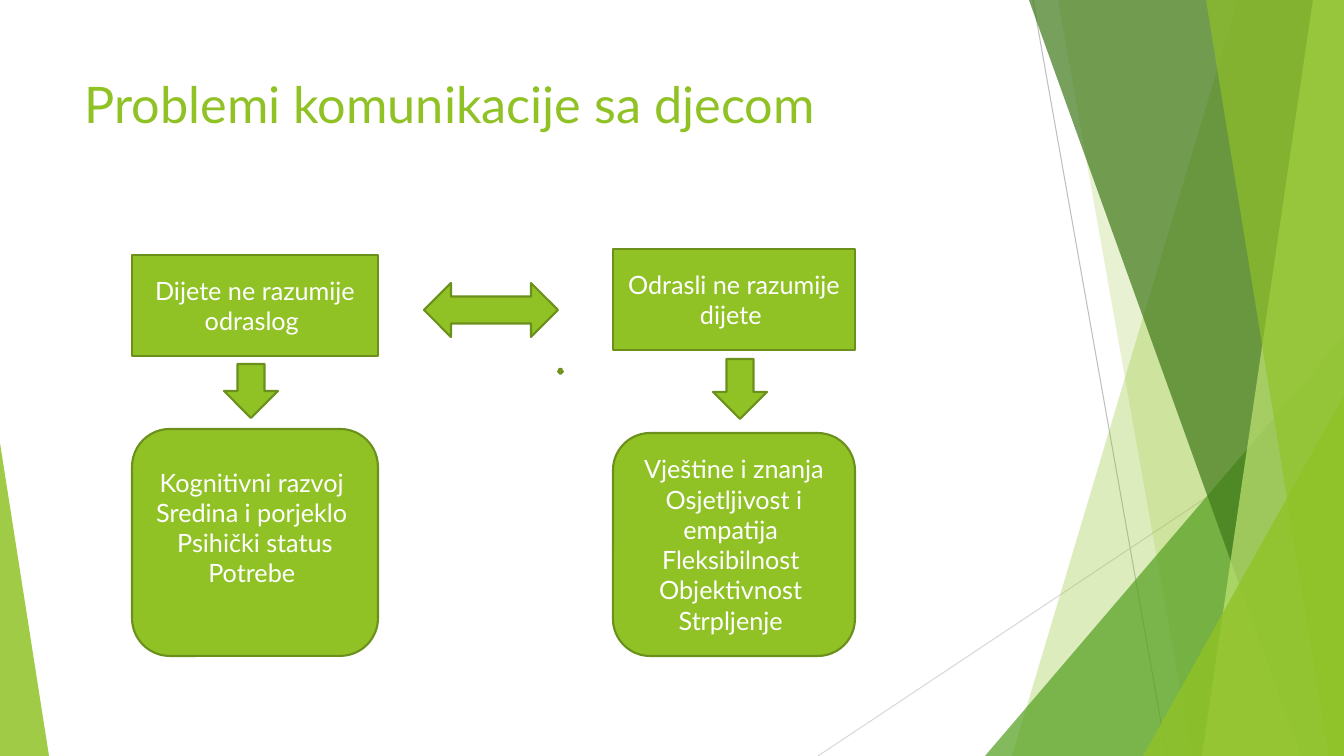
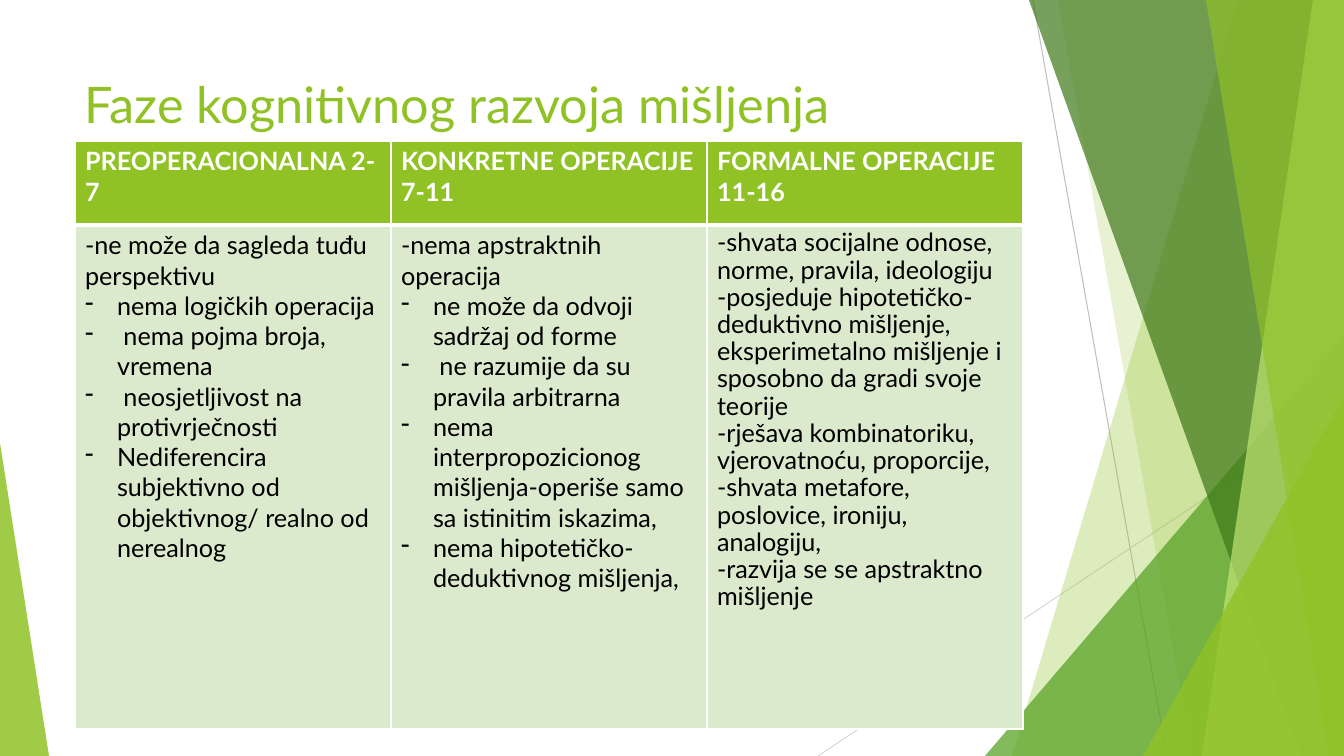
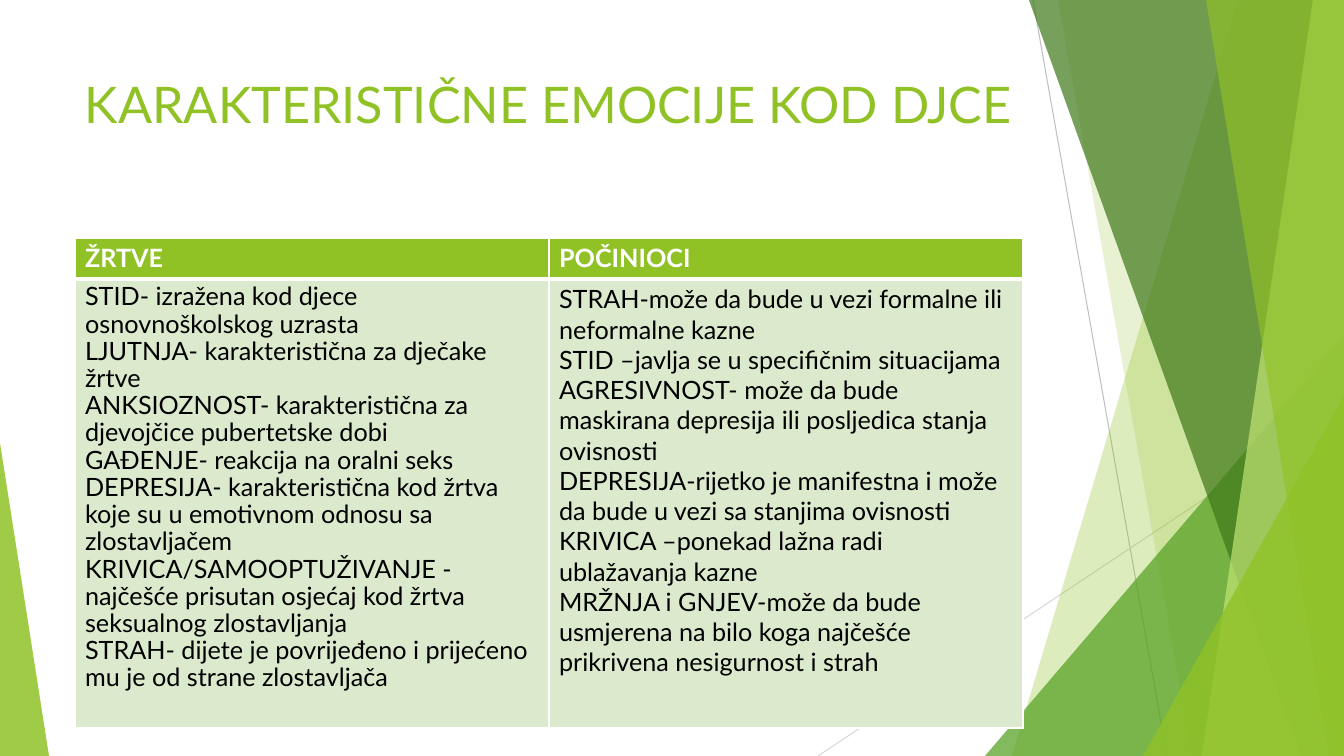
"""Build three slides on communication with children and their emotions."""
from dataclasses import dataclass

from lxml import etree
from pptx import Presentation
from pptx import util as u
from pptx.dml import color
from pptx.enum import shapes, text
from pptx.oxml import ns

PX = 12192000 / 1344
WIDTH, HEIGHT = 1344, 756
KIND = shapes.MSO_SHAPE


@dataclass(frozen=True)
class Theme:
    """Colours, font and type sizes of the deck."""
    font: str = "Lato"
    title_size: int = 36
    body_size: int = 18
    lime: str = "90C226"
    green: str = "54A021"
    forest: str = "3F7819"
    pale: str = "C0E474"
    outline: str = "6B901C"
    cell: str = "DBE9CD"
    white: str = "FFFFFF"
    black: str = "000000"


THEME = Theme()


@dataclass(frozen=True)
class Ray:
    """Thin line behind the facets."""
    start: tuple[int, int]
    end: tuple[int, int]
    colour: str


@dataclass(frozen=True)
class Band:
    """Full-height facet given by its top and bottom left corners."""
    top: int
    bottom: int
    colour: str
    opacity: int


@dataclass(frozen=True)
class Wedge:
    """Right-angled triangle standing on the slide's lower edge."""
    left: int
    top: int
    width: int
    apex: int
    colour: str
    opacity: int


@dataclass(frozen=True)
class Node:
    """Box or block arrow of the diagram."""
    kind: KIND
    left: int
    top: int
    width: int
    height: int
    lines: tuple[str, ...] = ()
    space_below: int = 5


@dataclass(frozen=True)
class Column:
    """Heading and paragraphs of one table column."""
    heading: str
    lines: tuple[str, ...]
    spacing: float = 1.0
    dashed: bool = False


RAYS = (
    Ray((1033, 0), (1167, HEIGHT), "BFBFBF"),
    Ray((WIDTH, 406), (818, HEIGHT), "D9D9D9"),
)
FACETS = (
    Band(1238, 1012, THEME.lime, 30),
    Band(1058, 1192, THEME.lime, 20),
    Wedge(985, 336, 359, 1, THEME.green, 72),
    Band(1029, 1301, THEME.forest, 70),
    Band(1313, 1202, THEME.pale, 70),
    Band(1206, 1329, THEME.lime, 65),
    Wedge(1143, 396, 201, 1, THEME.lime, 80),
    Wedge(0, 443, 49, 0, THEME.lime, 85),
)
PROBLEMS = (
    Node(KIND.RECTANGLE, 132, 255, 246, 101, ("Dijete ne razumije odraslog ",)),
    Node(KIND.DOWN_ARROW, 558, 369, 5, 5),
    Node(KIND.LEFT_RIGHT_ARROW, 424, 283, 134, 54),
    Node(KIND.RECTANGLE, 613, 249, 242, 101, ("Odrasli ne razumije dijete ",)),
    Node(KIND.DOWN_ARROW, 224, 364, 54, 54),
    Node(KIND.DOWN_ARROW, 713, 359, 54, 60),
    Node(KIND.ROUNDED_RECTANGLE, 132, 429, 246, 227,
         ("Kognitivni razvoj ", "Sredina i porjeklo ", "Psihički status Potrebe "), 35),
    Node(KIND.ROUNDED_RECTANGLE, 613, 433, 242, 223,
         ("Vještine i znanja", "Osjetljivost i empatija ", "Fleksibilnost ",
          "Objektivnost ", "Strpljenje ")),
)
PHASES = (
    Column("PREOPERACIONALNA 2-7", (
        "-ne može da sagleda tuđu perspektivu",
        "nema logičkih operacija",
        " nema pojma broja, vremena",
        " neosjetljivost na protivrječnosti",
        "Nediferencira subjektivno od objektivnog/ realno od nerealnog",
    ), dashed=True),
    Column("KONKRETNE OPERACIJE 7-11", (
        "-nema apstraktnih operacija",
        "ne može da odvoji sadržaj od forme",
        " ne razumije da su pravila arbitrarna",
        "nema interpropozicionog mišljenja-operiše samo sa istinitim iskazima,",
        "nema hipotetičko-deduktivnog mišljenja,",
    ), dashed=True),
    Column("FORMALNE OPERACIJE 11-16", (
        "-shvata socijalne odnose, norme, pravila, ideologiju",
        "-posjeduje hipotetičko-deduktivno mišljenje, eksperimetalno mišljenje "
        "i sposobno da gradi svoje teorije",
        "-rješava kombinatoriku, vjerovatnoću, proporcije,",
        "-shvata metafore, poslovice, ironiju, analogiju,",
        "-razvija se se apstraktno mišljenje",
    ), spacing=0.9),
)
EMOTIONS = (
    Column("ŽRTVE", (
        "STID- izražena kod djece osnovnoškolskog uzrasta",
        "LJUTNJA- karakteristična za dječake žrtve",
        "ANKSIOZNOST- karakteristična za djevojčice pubertetske dobi",
        "GAĐENJE- reakcija na oralni seks",
        "DEPRESIJA- karakteristična kod žrtva koje su u emotivnom odnosu sa zlostavljačem",
        "KRIVICA/SAMOOPTUŽIVANJE - najčešće prisutan osjećaj kod žrtva "
        "seksualnog zlostavljanja",
        "STRAH- dijete je povrijeđeno i prijećeno mu je od strane zlostavljača",
    ), spacing=0.9),
    Column("POČINIOCI", (
        "STRAH-može da bude u vezi formalne ili neformalne kazne",
        "STID –javlja se u specifičnim situacijama",
        "AGRESIVNOST- može da bude maskirana depresija ili posljedica stanja ovisnosti",
        "DEPRESIJA-rijetko je manifestna i može da bude u vezi sa stanjima ovisnosti",
        "KRIVICA –ponekad lažna radi ublažavanja kazne",
        "MRŽNJA i GNJEV-može da bude usmjerena na bilo koga najčešće prikrivena "
        "nesigurnost i strah",
    )),
)


def px(*lengths: int) -> list[u.Emu]:
    """Turn pixel lengths into EMU."""
    return [u.Emu(round(length * PX)) for length in lengths]


def rgb(code: str) -> color.RGBColor:
    """Return the colour for a hexadecimal code."""
    return color.RGBColor.from_string(code)


def paint(facet, code: str, opacity: int = 100) -> None:
    """Give a shape a flat fill without shadow."""
    facet.shadow.inherit = False
    facet.fill.solid()
    facet.fill.fore_color.rgb = rgb(code)
    if opacity < 100:
        tint = facet.element.xpath("./p:spPr/a:solidFill/a:srgbClr")[0]
        etree.SubElement(tint, ns.qn("a:alpha"), val=str(opacity * 1000))


def write(paragraph, words: str, code: str, size: int = THEME.body_size,
          bold: bool = False) -> None:
    """Add one styled run to a paragraph."""
    run = paragraph.add_run()
    run.text = words
    run.font.name = THEME.font
    run.font.size = u.Pt(size)
    run.font.bold = bold
    run.font.color.rgb = rgb(code)


def paragraphs(frame, lines: tuple[str, ...]):
    """Yield a paragraph for each line of text."""
    for index, line in enumerate(lines):
        yield (frame.add_paragraph() if index else frame.paragraphs[0]), line


def draw_ray(slide, ray: Ray) -> None:
    """Draw one thin background line."""
    line = slide.shapes.add_connector(
        shapes.MSO_CONNECTOR.STRAIGHT, *px(*ray.start, *ray.end))
    line.line.color.rgb = rgb(ray.colour)
    line.line.width = u.Pt(0.75)
    etree.SubElement(line.element.spPr, ns.qn("a:effectLst"))


def draw_facet(slide, facet: Band | Wedge) -> None:
    """Draw one translucent background facet."""
    if isinstance(facet, Band):
        outline = slide.shapes.build_freeform(facet.top, 0, scale=PX)
        outline.add_line_segments(
            [(WIDTH, 0), (WIDTH, HEIGHT), (facet.bottom, HEIGHT)], close=True)
        pane = outline.convert_to_shape()
    else:
        pane = slide.shapes.add_shape(
            KIND.ISOSCELES_TRIANGLE,
            *px(facet.left, facet.top, facet.width, HEIGHT - facet.top))
        pane.adjustments[0] = facet.apex
    paint(pane, facet.colour, facet.opacity)
    pane.line.fill.background()


def add_titled_slide(deck, title: str):
    """Add a slide with the shared background and title."""
    slide = deck.slides.add_slide(deck.slide_layouts[6])
    for ray in RAYS:
        draw_ray(slide, ray)
    for facet in FACETS:
        draw_facet(slide, facet)
    frame = slide.shapes.add_textbox(*px(75, 68, 948, 145)).text_frame
    frame.word_wrap = True
    write(frame.paragraphs[0], title, THEME.lime, THEME.title_size)
    return slide


def draw_node(slide, node: Node) -> None:
    """Draw one box or arrow of the diagram."""
    box = slide.shapes.add_shape(
        node.kind, *px(node.left, node.top, node.width, node.height))
    paint(box, THEME.lime)
    box.line.color.rgb = rgb(THEME.outline)
    box.line.width = u.Pt(1.5)
    frame = box.text_frame
    frame.word_wrap = True
    frame.vertical_anchor = text.MSO_ANCHOR.MIDDLE
    frame.margin_bottom = px(node.space_below)[0]
    for paragraph, line in paragraphs(frame, node.lines):
        paragraph.alignment = text.PP_ALIGN.CENTER
        write(paragraph, line, THEME.white)


def style_cell(cell, fill: str, borders: dict[str, int]) -> None:
    """Fill a cell and give it white borders in points."""
    cell.fill.solid()
    cell.fill.fore_color.rgb = rgb(fill)
    properties = cell._tc.get_or_add_tcPr()
    for index, (side, points) in enumerate(borders.items()):
        edge = etree.Element(ns.qn(f"a:ln{side}"), w=str(u.Pt(points)))
        solid = etree.SubElement(edge, ns.qn("a:solidFill"))
        etree.SubElement(solid, ns.qn("a:srgbClr"), val=THEME.white)
        properties.insert(index, edge)


def add_dash(paragraph) -> None:
    """Turn a paragraph into a dashed list item."""
    properties = paragraph._p.get_or_add_pPr()
    indent = px(32)[0]
    properties.set("marL", str(indent))
    properties.set("indent", str(-indent))
    etree.SubElement(properties, ns.qn("a:buChar"), char="-")


def draw_table(slide, top: int, heights: tuple[int, int],
               columns: tuple[Column, ...]) -> None:
    """Draw a table with a heading row and one body row."""
    table = slide.shapes.add_table(
        2, len(columns), *px(75, top, 948, sum(heights))).table
    table.horz_banding = False
    for row, height in zip(table.rows, px(*heights)):
        row.height = height
    for index, column in enumerate(columns):
        heading, body = table.cell(0, index), table.cell(1, index)
        style_cell(heading, THEME.lime, {"L": 1, "R": 1, "T": 1, "B": 3})
        style_cell(body, THEME.cell, {"L": 1, "R": 1, "T": 3, "B": 1})
        write(heading.text_frame.paragraphs[0], column.heading, THEME.white, bold=True)
        for paragraph, line in paragraphs(body.text_frame, column.lines):
            paragraph.line_spacing = column.spacing
            if column.dashed and line != column.lines[0]:
                add_dash(paragraph)
            write(paragraph, line, THEME.black)


def main() -> None:
    """Build and save the deck."""
    deck = Presentation()
    deck.slide_width, deck.slide_height = px(WIDTH, HEIGHT)
    problems = add_titled_slide(deck, "Problemi komunikacije sa djecom")
    for node in PROBLEMS:
        draw_node(problems, node)
    phases = add_titled_slide(deck, "Faze kognitivnog razvoja mišljenja")
    draw_table(phases, 141, (84, 504), PHASES)
    emotions = add_titled_slide(deck, "KARAKTERISTIČNE EMOCIJE KOD DJCE")
    draw_table(emotions, 238, (41, 449), EMOTIONS)
    deck.save("out.pptx")


if __name__ == "__main__":
    main()
